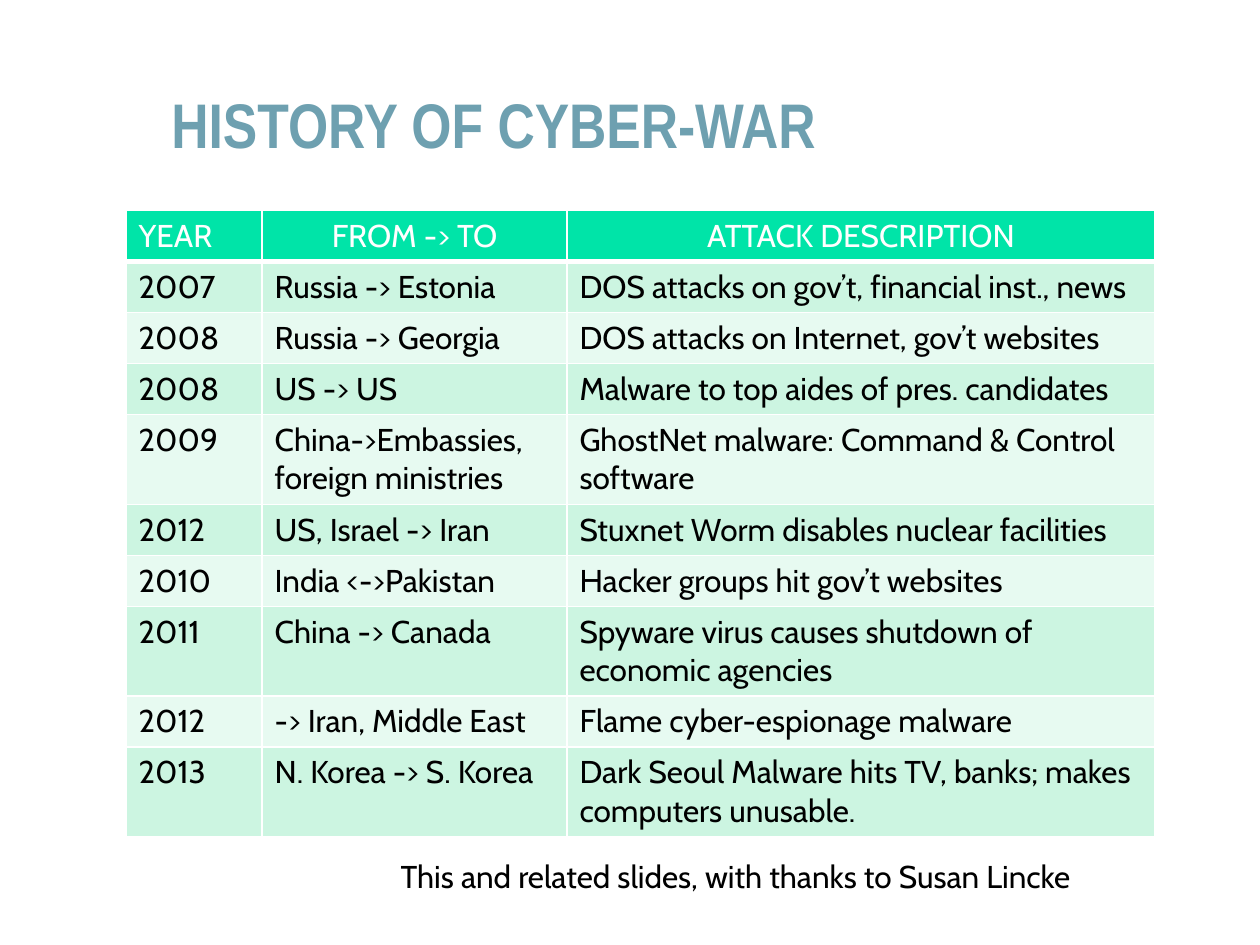
from lxml.etree import SubElement
from pptx import Presentation
from pptx.dml.color import RGBColor
from pptx.enum.text import MSO_ANCHOR, MSO_AUTO_SIZE, PP_ALIGN
from pptx.oxml.ns import qn
from pptx.util import Pt

WHITE = RGBColor(0xFF, 0xFF, 0xFF)
BLACK = RGBColor(0x00, 0x00, 0x00)
TITLE_BLUE = RGBColor(0x6E, 0xA0, 0xB0)
HEADER_GREEN = RGBColor(0x00, 0xE4, 0xA8)
BAND_GREENS = (RGBColor(0xCC, 0xF5, 0xE1), RGBColor(0xE7, 0xFA, 0xF1))

COLUMN_WIDTHS = (77.8, 174.2, 336)
ROW_HEIGHT = 29.2
HEADERS = ("YEAR", "FROM -> TO", "ATTACK DESCRIPTION")
ATTACKS = (
    ("2007", "Russia -> Estonia", "DOS attacks on gov’t, financial inst., news"),
    ("2008", "Russia -> Georgia", "DOS attacks on Internet, gov’t websites"),
    ("2008", "US -> US", "Malware to top aides of pres. candidates"),
    ("2009", "China->Embassies, foreign ministries",
     "GhostNet malware: Command & Control software"),
    ("2012", "US, Israel -> Iran", "Stuxnet Worm disables nuclear facilities"),
    ("2010", "India <->Pakistan", "Hacker groups hit gov’t websites"),
    ("2011", "China -> Canada", "Spyware virus causes shutdown of economic agencies"),
    ("2012", "-> Iran, Middle East", "Flame cyber-espionage malware"),
    ("2013", "N. Korea -> S. Korea",
     "Dark Seoul Malware hits TV, banks; makes computers unusable."),
)


class SlideBuilder:
    body_font = "Cabin"
    body_size = 18
    title_font = "Arial Narrow"
    title_size = 36

    def __init__(self, presentation):
        self.slide = presentation.slides.add_slide(presentation.slide_layouts[5])

    def set_text(self, text_frame, text, color, font_name=body_font, size=body_size,
                 bold=False, alignment=PP_ALIGN.LEFT):
        text_frame.text = text
        paragraph = text_frame.paragraphs[0]
        paragraph.alignment = alignment
        font = paragraph.runs[0].font
        font.name = font_name
        font.size = Pt(size)
        font.bold = bold
        font.color.rgb = color

    def title(self, text, left, top, width, height):
        shape = self.slide.shapes.title
        shape.left, shape.top = Pt(left), Pt(top)
        shape.width, shape.height = Pt(width), Pt(height)
        text_frame = shape.text_frame
        text_frame.auto_size = MSO_AUTO_SIZE.NONE
        text_frame.vertical_anchor = MSO_ANCHOR.BOTTOM
        self.set_text(text_frame, text, TITLE_BLUE, self.title_font, self.title_size, True)

    def text(self, text, left, top, width, height):
        shape = self.slide.shapes.add_textbox(Pt(left), Pt(top), Pt(width), Pt(height))
        shape.text_frame.word_wrap = True
        shape.text_frame.auto_size = MSO_AUTO_SIZE.SHAPE_TO_FIT_TEXT
        self.set_text(shape.text_frame, text, BLACK)

    def borders(self, cell, bottom_width):
        properties = cell._tc.get_or_add_tcPr()
        widths = {"a:lnL": 1, "a:lnR": 1, "a:lnT": 1, "a:lnB": bottom_width}
        for tag, width in widths.items():
            line = SubElement(properties, qn(tag), w=str(Pt(width)))
            fill = SubElement(line, qn("a:solidFill"))
            SubElement(fill, qn("a:srgbClr"), val=str(WHITE))

    def table(self, headers, records, left, top, column_widths, row_height):
        rows = (headers, *records)
        table = self.slide.shapes.add_table(
            len(rows), len(headers), Pt(left), Pt(top),
            Pt(sum(column_widths)), Pt(row_height * len(rows))).table
        for column, width in zip(table.columns, column_widths):
            column.width = Pt(width)
        for row_index, values in enumerate(rows):
            table.rows[row_index].height = Pt(row_height)
            is_header = row_index == 0
            fill_color = HEADER_GREEN if is_header else BAND_GREENS[(row_index - 1) % 2]
            for column_index, value in enumerate(values):
                cell = table.cell(row_index, column_index)
                self.borders(cell, 3 if is_header else 1)
                cell.fill.solid()
                cell.fill.fore_color.rgb = fill_color
                centered = is_header and column_index > 0
                self.set_text(cell.text_frame, value, WHITE if is_header else BLACK,
                              alignment=PP_ALIGN.CENTER if centered else PP_ALIGN.LEFT)


def main():
    presentation = Presentation()
    presentation.slide_width = Pt(720)
    presentation.slide_height = Pt(540)
    builder = SlideBuilder(presentation)
    builder.title("HISTORY OF CYBER-WAR", 90.7, 16.6, 613.4, 79.2)
    builder.table(HEADERS, ATTACKS, 72, 120.2, COLUMN_WIDTHS, ROW_HEIGHT)
    builder.text("This and related slides, with thanks to Susan Lincke",
                 221.8, 486, 450, 29)
    presentation.save("out.pptx")


if __name__ == "__main__":
    main()
